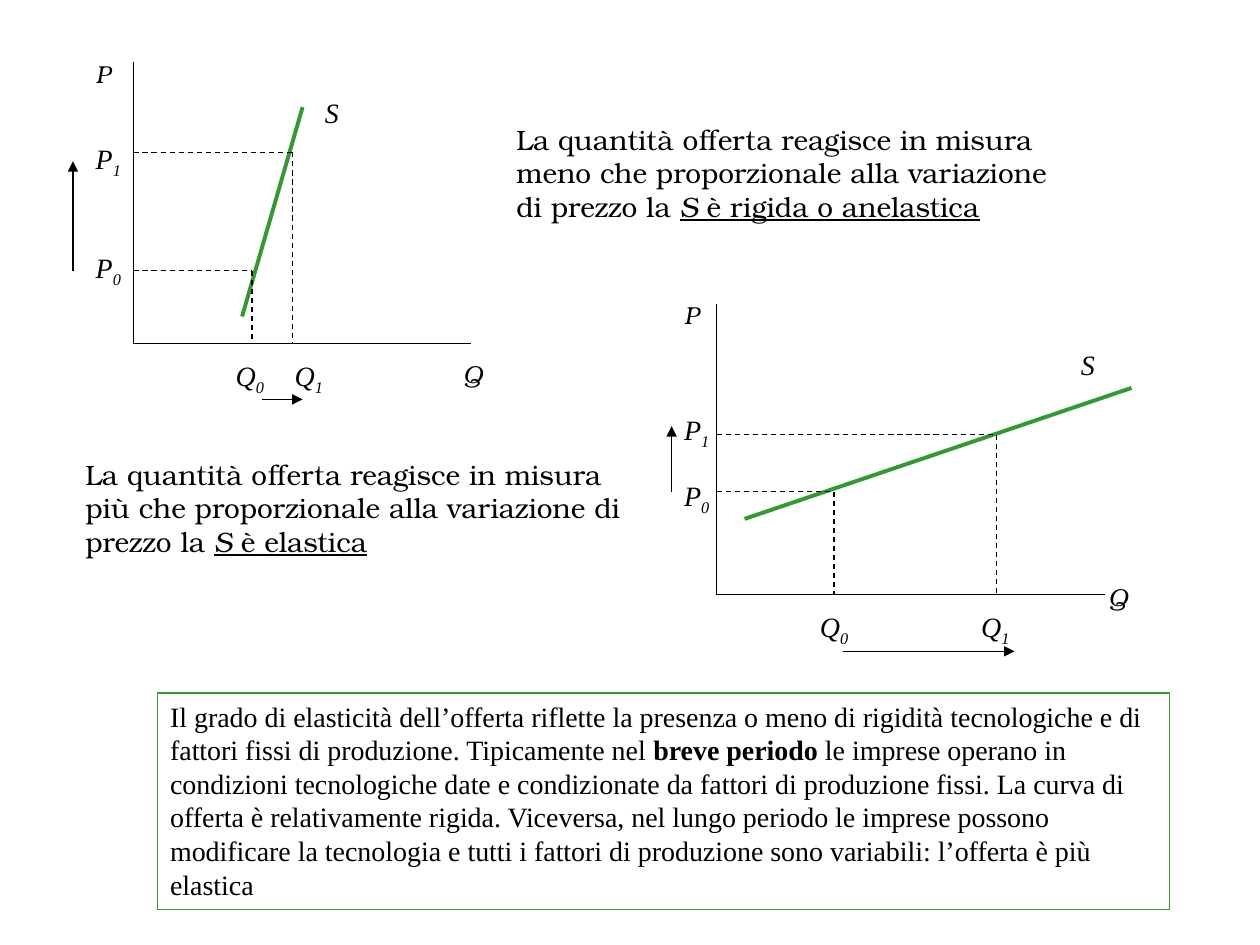
"""Build a slide comparing rigid and elastic supply curves."""
import dataclasses
import typing

import lxml.etree
import pptx
import pptx.dml.color
import pptx.enum.dml
import pptx.enum.shapes
import pptx.enum.text
import pptx.oxml.ns
import pptx.util

Cm = pptx.util.Cm
Point = tuple[float, float]


@dataclasses.dataclass(frozen=True)
class Theme:
    ink: pptx.dml.color.RGBColor = pptx.dml.color.RGBColor(0, 0, 0)
    supply: pptx.dml.color.RGBColor = pptx.dml.color.RGBColor(0x33, 0x99, 0x33)
    display_font: str = "TeX Gyre Bonum"
    text_font: str = "Times New Roman"
    axis_size: float = 14
    text_size: float = 16
    thin: float = 0.75
    thick: float = 2.25


THEME = Theme()


class Span(typing.NamedTuple):
    text: str
    bold: bool = False
    italic: bool = False
    underline: bool = False
    subscript: bool = False


class Label(typing.NamedTuple):
    name: str
    left: float
    top: float
    index: str = ""


@dataclasses.dataclass(frozen=True)
class Diagram:
    origin: Point
    axis_top: float
    axis_right: float
    supply: tuple[Point, Point]
    equilibria: tuple[Point, Point]
    price_arrow: tuple[Point, Point]
    quantity_arrow: tuple[Point, Point]
    axis_labels: tuple[Label, ...]
    labels: tuple[Label, ...]


class Statement(typing.NamedTuple):
    left: float
    top: float
    spans: tuple[Span, ...]


DIAGRAMS = (
    Diagram(
        origin=(2.69, 6.93), axis_top=1.24, axis_right=9.5,
        supply=((6.1, 2.16), (4.88, 6.38)),
        equilibria=((5.08, 5.46), (5.89, 3.07)),
        price_arrow=((1.47, 5.46), (1.47, 3.25)),
        quantity_arrow=((5.28, 8.05), (6.1, 8.05)),
        axis_labels=(Label("P", 1.68, 1.07), Label("Q", 9.09, 7.11)),
        labels=(
            Label("S", 6.3, 1.8),
            Label("P", 1.68, 4.93, "0"), Label("P", 1.68, 2.72, "1"),
            Label("Q", 4.5, 7.11, "0"), Label("Q", 5.69, 7.11, "1"),
        ),
    ),
    Diagram(
        origin=(14.45, 11.99), axis_top=6.12, axis_right=22.28,
        supply=((22.81, 7.82), (15.01, 10.46)),
        equilibria=((16.81, 9.91), (20.09, 8.76)),
        price_arrow=((13.54, 9.91), (13.54, 8.59)),
        quantity_arrow=((16.99, 13.13), (20.45, 13.13)),
        axis_labels=(Label("P", 13.54, 5.92), Label("Q", 22.1, 11.61)),
        labels=(
            Label("S", 21.54, 6.88),
            Label("P", 13.54, 9.53, "0"), Label("P", 13.54, 8.2, "1"),
            Label("Q", 16.28, 12.17, "0"), Label("Q", 19.53, 12.17, "1"),
        ),
    ),
)

STATEMENTS = (
    Statement(10.16, 2.34, (
        Span("La quantità offerta reagisce in misura meno che proporzionale "
             "alla variazione di prezzo la "),
        Span("S", italic=True, underline=True),
        Span(" è rigida o anelastica", underline=True),
    )),
    Statement(1.47, 9.09, (
        Span("La quantità offerta reagisce in misura più che proporzionale "
             "alla variazione di prezzo la "),
        Span("S", italic=True, underline=True),
        Span(" è elastica", underline=True),
    )),
)

CONCLUSION = (
    Span("Il grado di elasticità dell’offerta riflette la presenza o meno di rigidità "
         "tecnologiche e di fattori fissi di produzione. Tipicamente nel "),
    Span("breve periodo", bold=True),
    Span(" le imprese operano in condizioni tecnologiche date e condizionate da fattori "
         "di produzione fissi. La curva di offerta è relativamente rigida. Viceversa, nel "
         "lungo periodo le imprese possono modificare la tecnologia e tutti i fattori di "
         "produzione sono variabili: l’offerta è più elastica"),
)


def write_spans(shape, spans: tuple[Span, ...], font: str, size: float) -> None:
    """Fill a shape with one left-aligned paragraph of formatted runs."""
    frame = shape.text_frame
    frame.word_wrap = True
    frame.vertical_anchor = pptx.enum.text.MSO_ANCHOR.TOP
    paragraph = frame.paragraphs[0]
    paragraph.alignment = pptx.enum.text.PP_ALIGN.LEFT
    for span in spans:
        run = paragraph.add_run()
        run.text = span.text
        run.font.name = font
        run.font.size = pptx.util.Pt(size)
        run.font.color.rgb = THEME.ink
        run.font.bold = span.bold
        run.font.italic = span.italic
        run.font.underline = span.underline
        if span.subscript:
            run._r.get_or_add_rPr().set("baseline", "-25000")


def draw_line(slide, start: Point, end: Point, color=THEME.ink, width: float = THEME.thin,
              dashed: bool = False, arrow: bool = False) -> None:
    """Draw a straight connector, optionally dashed or with an arrowhead."""
    connector = slide.shapes.add_connector(
        pptx.enum.shapes.MSO_CONNECTOR.STRAIGHT, *map(Cm, start + end))
    connector.line.color.rgb = color
    connector.line.width = pptx.util.Pt(width)
    if dashed:
        connector.line.dash_style = pptx.enum.dml.MSO_LINE.DASH
    qualified = pptx.oxml.ns.qn
    if arrow:
        outline = connector.line._get_or_add_ln()
        lxml.etree.SubElement(outline, qualified("a:tailEnd"), type="triangle")
    lxml.etree.SubElement(connector._element.spPr, qualified("a:effectLst"))


def draw_label(slide, label: Label, font: str, size: float) -> None:
    """Write an italic symbol with an optional subscript index."""
    width = 1.3 if label.index else 0.95
    box = slide.shapes.add_textbox(Cm(label.left), Cm(label.top), Cm(width), Cm(0.94))
    spans = [Span(label.name, italic=True)]
    if label.index:
        spans.append(Span(label.index, italic=True, subscript=True))
    write_spans(box, tuple(spans), font, size)


def draw_diagram(slide, diagram: Diagram) -> None:
    """Draw axes, supply curve, equilibrium guides, arrows and labels."""
    left, bottom = diagram.origin
    draw_line(slide, (left, diagram.axis_top), diagram.origin)
    draw_line(slide, diagram.origin, (diagram.axis_right, bottom))
    draw_line(slide, *diagram.supply, color=THEME.supply, width=THEME.thick)
    for quantity, price in diagram.equilibria:
        draw_line(slide, (left, price), (quantity, price), dashed=True)
        draw_line(slide, (quantity, price), (quantity, bottom), dashed=True)
    for arrow in (diagram.price_arrow, diagram.quantity_arrow):
        draw_line(slide, *arrow, arrow=True)
    for label in diagram.axis_labels:
        draw_label(slide, label, THEME.display_font, THEME.axis_size)
    for label in diagram.labels:
        draw_label(slide, label, THEME.text_font, THEME.text_size)


def draw_statement(slide, statement: Statement) -> None:
    """Write the reading that belongs to a diagram."""
    box = slide.shapes.add_textbox(
        Cm(statement.left), Cm(statement.top), Cm(11.46), Cm(2.29))
    write_spans(box, statement.spans, THEME.display_font, THEME.text_size)


def draw_conclusion(slide) -> None:
    """Draw the outlined concluding box."""
    box = slide.shapes.add_shape(
        pptx.enum.shapes.MSO_SHAPE.RECTANGLE, Cm(3.18), Cm(13.97), Cm(20.4), Cm(4.37))
    box.shadow.inherit = False
    box.fill.background()
    box.line.color.rgb = THEME.supply
    box.line.width = pptx.util.Pt(THEME.thin)
    write_spans(box, CONCLUSION, THEME.text_font, THEME.text_size)


def main() -> None:
    """Build and save the presentation."""
    presentation = pptx.Presentation()
    presentation.slide_width, presentation.slide_height = Cm(25.4), Cm(19.05)
    slide = presentation.slides.add_slide(presentation.slide_layouts[6])
    for diagram in DIAGRAMS:
        draw_diagram(slide, diagram)
    for statement in STATEMENTS:
        draw_statement(slide, statement)
    draw_conclusion(slide)
    presentation.save("out.pptx")


if __name__ == "__main__":
    main()
